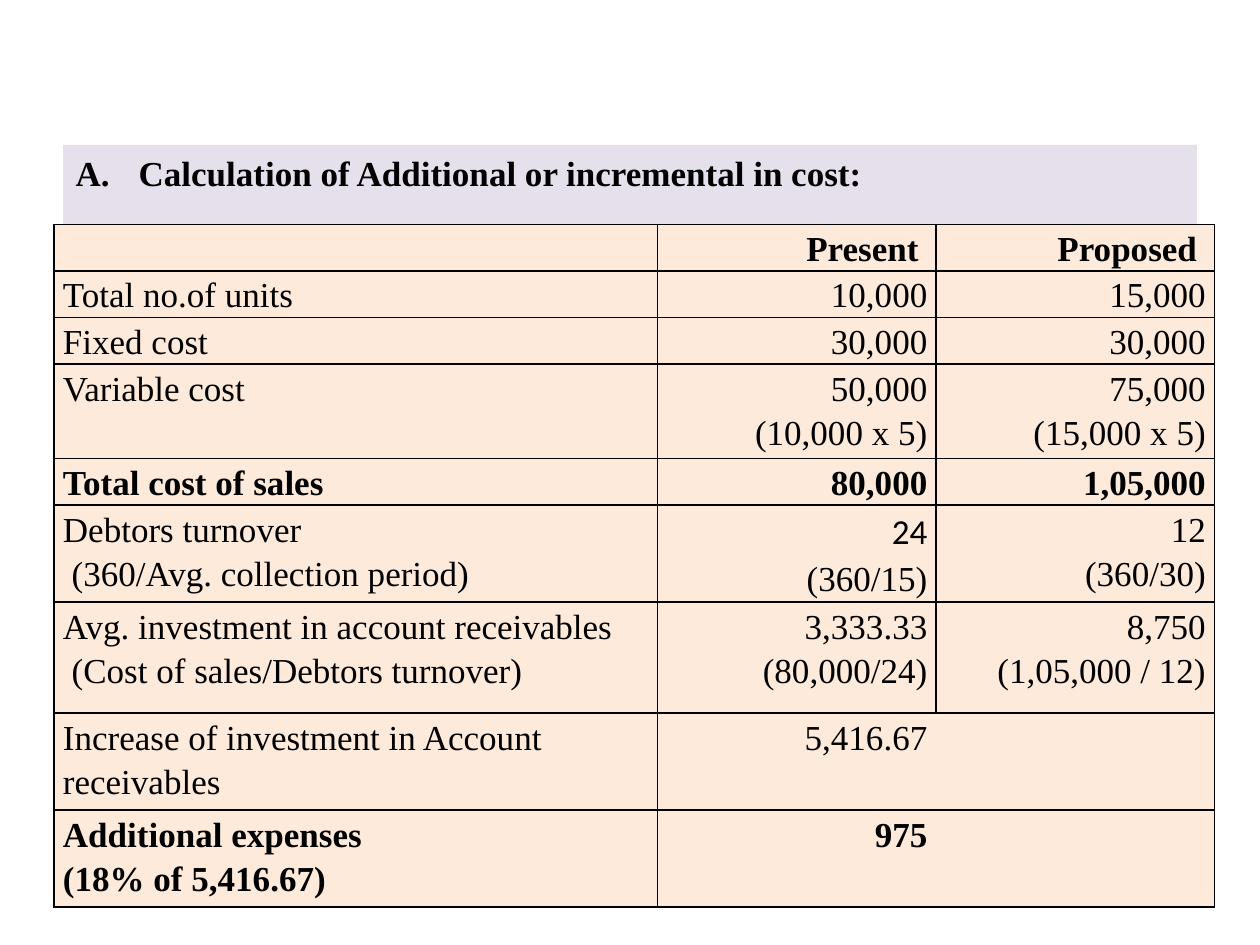
from lxml import etree
from pptx import Presentation
from pptx.dml.color import RGBColor
from pptx.enum import text
from pptx.oxml.ns import qn
from pptx.util import Inches, Pt

SERIF = "Times New Roman"
INK, LILAC, PEACH = "000000", "E6E0EC", "FDEADA"
HEADING = "Calculation of Additional or incremental in cost:"

# Each cell is a list of paragraphs
ROWS = [
    ([], ["Present "], ["Proposed "]),
    (["Total no.of units"], ["10,000"], ["15,000"]),
    (["Fixed cost"], ["30,000"], ["30,000"]),
    (["Variable cost"], ["50,000", "(10,000 x 5)"], ["75,000", "(15,000 x 5)"]),
    (["Total cost of sales"], ["80,000"], ["1,05,000"]),
    (["Debtors turnover", " (360/Avg. collection period)"],
     ["24", "(360/15)"], ["12", "(360/30)"]),
    (["Avg. investment in account receivables", " (Cost of sales/Debtors turnover)"],
     ["3,333.33", "(80,000/24)"], ["8,750", "(1,05,000 / 12)"]),
    (["Increase of investment in Account receivables"], ["5,416.67"], []),
    (["Additional expenses", "(18% of 5,416.67)"], ["975"], []),
]
BOLD_ROWS = {0, 4, 8}
OPEN_ROWS = {7, 8}  # no line between the two value columns
CALIBRI_TEXT = {"24"}
COLUMN_WIDTHS = [4.79, 2.21, 2.21]
ROW_HEIGHTS = [0.37, 0.37, 0.37, 0.75, 0.37, 0.77, 0.88, 0.77, 0.77]


def color(hex_code):
    return RGBColor.from_string(hex_code)


def paint(item, hex_code):
    item.fill.solid()
    item.fill.fore_color.rgb = color(hex_code)


def add_span(para, words, bold):
    span = para.add_run()
    span.text = words
    span.font.name = "Calibri" if words in CALIBRI_TEXT else SERIF
    span.font.size = Pt(20)
    span.font.bold = bold
    span.font.color.rgb = color(INK)


def set_borders(cell, open_sides):
    """Draw 1 pt lines on every side except the open ones."""
    properties = cell._tc.get_or_add_tcPr()
    for place, side in enumerate("LRTB"):
        line = etree.Element(qn(f"a:ln{side}"), w=str(Pt(1)))
        if side in open_sides:
            etree.SubElement(line, qn("a:noFill"))
        else:
            fill = etree.SubElement(line, qn("a:solidFill"))
            etree.SubElement(fill, qn("a:srgbClr"), val=INK)
        properties.insert(place, line)


def add_heading(page):
    body = page.placeholders[1]
    body.left, body.top = Inches(0.5), Inches(1.15)
    body.width, body.height = Inches(9), Inches(5.55)
    paint(body, LILAC)
    para = body.text_frame.paragraphs[0]
    add_span(para, HEADING, True)
    properties = para._p.get_or_add_pPr()
    properties.set("marL", str(Inches(0.5)))
    properties.set("indent", str(Inches(-0.5)))
    etree.SubElement(properties, qn("a:buFont"), typeface="+mj-lt")
    etree.SubElement(properties, qn("a:buAutoNum"), type="alphaUcPeriod")


def fill_cell(cell, lines, row, column):
    cell.margin_left = cell.margin_right = Inches(0.07)
    cell.margin_top = cell.margin_bottom = 0
    paint(cell, PEACH)
    open_sides = ("", "R", "L")[column] if row in OPEN_ROWS else ""
    set_borders(cell, open_sides)
    frame = cell.text_frame
    for number, words in enumerate(lines):
        para = frame.add_paragraph() if number else frame.paragraphs[0]
        para.line_spacing = 1.15
        if column:
            para.alignment = text.PP_ALIGN.RIGHT
        add_span(para, words, row in BOLD_ROWS)


def add_cost_table(page):
    frame = page.shapes.add_table(
        len(ROWS), len(COLUMN_WIDTHS), Inches(0.43), Inches(1.78),
        Inches(sum(COLUMN_WIDTHS)), Inches(sum(ROW_HEIGHTS)))
    table = frame.table
    table.first_row = table.horz_banding = False
    for column, width in zip(table.columns, COLUMN_WIDTHS):
        column.width = Inches(width)
    for row, height in zip(table.rows, ROW_HEIGHTS):
        row.height = Inches(height)
    for row, cells in enumerate(ROWS):
        for column, lines in enumerate(cells):
            fill_cell(table.cell(row, column), lines, row, column)


def main():
    deck = Presentation()
    deck.slide_width, deck.slide_height = Inches(10), Inches(7.5)
    page = deck.slides.add_slide(deck.slide_layouts[1])
    title = page.shapes.title._element
    title.getparent().remove(title)
    add_heading(page)
    add_cost_table(page)
    deck.save("out.pptx")


if __name__ == "__main__":
    main()
